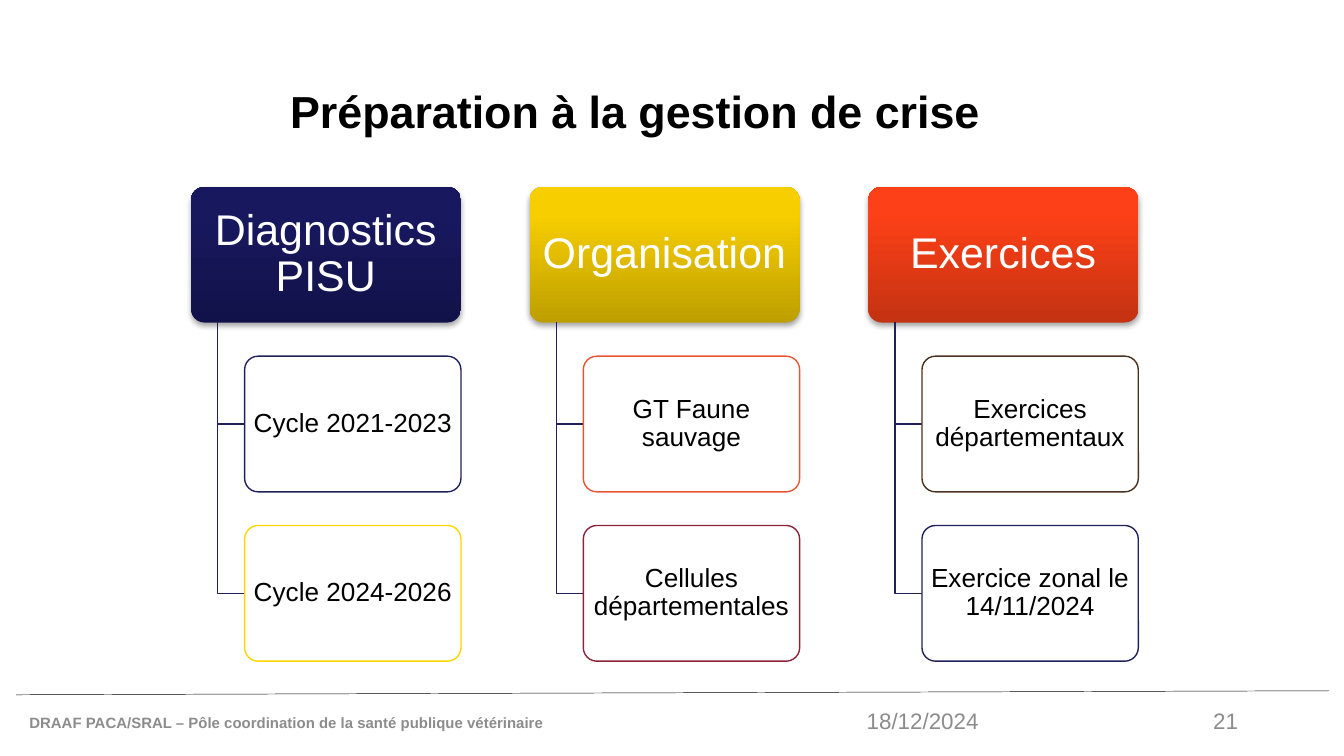
from copy import deepcopy

from lxml.etree import SubElement
from pptx import Presentation
from pptx.dml.color import RGBColor
from pptx.enum.shapes import MSO_CONNECTOR, MSO_SHAPE
from pptx.enum.text import MSO_ANCHOR, PP_ALIGN
from pptx.oxml.ns import qn
from pptx.util import Inches, Pt

BLACK = RGBColor(0x00, 0x00, 0x00)
WHITE = RGBColor(0xFF, 0xFF, 0xFF)
GREY = RGBColor(0x8C, 0x8C, 0x8C)
NAVY = RGBColor(0x21, 0x21, 0x5A)
YELLOW = RGBColor(0xFF, 0xD5, 0x00)
CORAL = RGBColor(0xEA, 0x54, 0x33)
WINE = RGBColor(0x8C, 0x22, 0x37)
BROWN = RGBColor(0x49, 0x31, 0x1F)
NAVY_SHADES = [RGBColor(0x12, 0x12, 0x4A), RGBColor(0x18, 0x18, 0x5F), RGBColor(0x16, 0x16, 0x61)]
YELLOW_SHADES = [RGBColor(0xBE, 0x9F, 0x00), RGBColor(0xF7, 0xCE, 0x00), RGBColor(0xF8, 0xCF, 0x00)]
RED_SHADES = [RGBColor(0xC3, 0x32, 0x12), RGBColor(0xFD, 0x40, 0x17), RGBColor(0xFF, 0x40, 0x16)]

# Heading, gradient from bottom to top, items with their outline
COLUMNS = [
    ("Diagnostics PISU", NAVY_SHADES, [("Cycle 2021-2023", NAVY), ("Cycle 2024-2026", YELLOW)]),
    ("Organisation", YELLOW_SHADES, [("GT Faune sauvage", CORAL), ("Cellules départementales", WINE)]),
    ("Exercices", RED_SHADES, [("Exercices départementaux", BROWN), ("Exercice zonal le 14/11/2024", NAVY)]),
]
LEFT, TOP = 1.42, 1.39
COLUMN_STEP, ROW_STEP = 2.52, 1.26
HEADING_WIDTH, ITEM_WIDTH, BOX_HEIGHT = 2.01, 1.61, 1.01
TRUNK_INDENT, ITEM_INDENT = 0.2, 0.4

prs = Presentation()
prs.slide_width = Inches(10)
prs.slide_height = Inches(10 * 9 / 16)
slide = prs.slides.add_slide(prs.slide_layouts[6])
shapes = slide.shapes


def write(shape, text, size, color, align=PP_ALIGN.LEFT, bold=False, spacing=1.0):
    frame = shape.text_frame
    frame.word_wrap = True
    frame.vertical_anchor = MSO_ANCHOR.MIDDLE
    paragraph = frame.paragraphs[0]
    paragraph.text = text
    paragraph.alignment = align
    paragraph.line_spacing = spacing
    font = paragraph.font
    font.name, font.size, font.bold = "Arial", Pt(size), bold
    font.color.rgb = color


def add_box(left, top, width, text, size, color, side_inset, end_inset):
    """Add a rounded box with centred text; fill and line are left to the caller."""
    box = shapes.add_shape(MSO_SHAPE.ROUNDED_RECTANGLE, Inches(left), Inches(top),
                           Inches(width), Inches(BOX_HEIGHT))
    box.adjustments[0] = 0.1
    box.shadow.inherit = False
    frame = box.text_frame
    frame.margin_left = frame.margin_right = Inches(side_inset)
    frame.margin_top = frame.margin_bottom = Inches(end_inset)
    write(box, text, size, color, PP_ALIGN.CENTER, spacing=0.9)
    return box


footer_rule = shapes.add_connector(MSO_CONNECTOR.STRAIGHT, Inches(0.12), Inches(5.17),
                                   Inches(9.89), Inches(5.14))
footer_rule.line.color.rgb = BLACK
footer_rule.line.width = Pt(0.25)
SubElement(footer_rule._element.spPr, qn("a:effectLst"))

for left, top, width, height, text, size, color, align, bold, spacing in [
    (0.12, 5.23, 4.13, 0.3, "DRAAF PACA/SRAL – Pôle coordination de la santé publique vétérinaire",
     8, GREY, PP_ALIGN.LEFT, True, 1.0),
    (8.69, 5.21, 0.62, 0.3, "21", 12, GREY, PP_ALIGN.RIGHT, False, 1.0),
    (2.06, 0.3, 7.25, 1.09, "Préparation à la gestion de crise", 24, BLACK, PP_ALIGN.LEFT, True, 0.9),
    (6.35, 5.21, 1.09, 0.3, "18/12/2024", 12, GREY, PP_ALIGN.LEFT, False, 1.0),
]:
    box = shapes.add_textbox(Inches(left), Inches(top), Inches(width), Inches(height))
    write(box, text, size, color, align, bold, spacing)

for column, (title, shades, items) in enumerate(COLUMNS):
    left = LEFT + column * COLUMN_STEP
    heading = add_box(left, TOP, HEADING_WIDTH, title, 23, WHITE, 0.05, 0.03)
    heading.line.fill.background()
    heading.fill.gradient()
    heading.fill.gradient_angle = 90
    properties = heading._element.spPr
    stop_list = properties.find(qn("a:gradFill")).find(qn("a:gsLst"))
    stop_list.append(deepcopy(stop_list[0]))
    for stop, position, shade in zip(heading.fill.gradient_stops, (0, 0.8, 1), shades):
        stop.position = position
        stop.color.rgb = shade
    shadow = SubElement(properties.find(qn("a:effectLst")), qn("a:outerShdw"),
                        blurRad=str(Pt(3.1)), dist=str(Pt(1.8)), dir="5400000", rotWithShape="0")
    shadow_color = SubElement(shadow, qn("a:srgbClr"), val=str(BLACK))
    SubElement(shadow_color, qn("a:alpha"), val="35000")

    trunk_x, item_x = left + TRUNK_INDENT, left + ITEM_INDENT
    for row, (label, outline) in enumerate(items, start=1):
        item_top = TOP + row * ROW_STEP
        middle = item_top + BOX_HEIGHT / 2
        path = shapes.build_freeform(Inches(trunk_x), Inches(TOP + BOX_HEIGHT))
        path.add_line_segments([(Inches(trunk_x), Inches(middle)), (Inches(item_x), Inches(middle))],
                               close=False)
        branch = path.convert_to_shape()
        branch.shadow.inherit = False
        branch.fill.background()
        branch.line.color.rgb = NAVY
        branch.line.width = Pt(0.75)

        item = add_box(item_x, item_top, ITEM_WIDTH, label, 14, BLACK, 0.03, 0.02)
        item.fill.solid()
        item.fill.fore_color.rgb = WHITE
        item.line.color.rgb = outline
        item.line.width = Pt(0.75)

prs.save("out.pptx")
